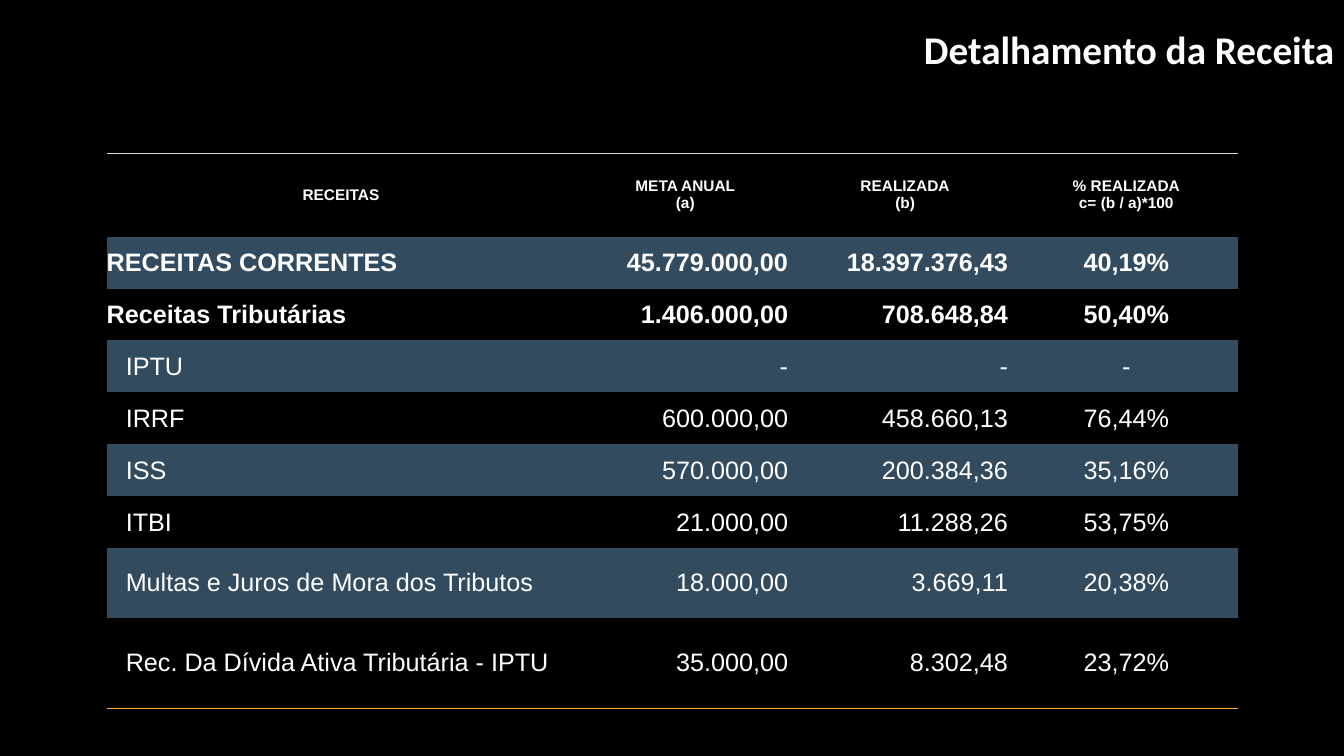
import pptx
import pptx.dml.color
import pptx.enum.text
import pptx.oxml
import pptx.oxml.ns
import pptx.util

Cm = pptx.util.Cm
Pt = pptx.util.Pt
ALIGN = pptx.enum.text.PP_ALIGN
ANCHOR = pptx.enum.text.MSO_ANCHOR

COLORS = {
    "background": "000000",
    "text": "FFFFFF",
    "band": "324B5F",
    "top_line": "D9D9D9",
    "bottom_line": "FCB11C",
}
NO_STYLE = "{2D5ABB26-0587-4C30-8999-92F81FD0307C}"

HEADER = ["RECEITAS", "META ANUAL\n(a)", "REALIZADA\n(b)", "% REALIZADA\nc= (b / a)*100"]
REVENUES = [
    ["RECEITAS CORRENTES", "45.779.000,00", "18.397.376,43", "40,19%"],
    ["Receitas Tributárias", "1.406.000,00", "708.648,84", "50,40%"],
    ["IPTU", "-", "-", "-"],
    ["IRRF", "600.000,00", "458.660,13", "76,44%"],
    ["ISS", "570.000,00", "200.384,36", "35,16%"],
    ["ITBI", "21.000,00", "11.288,26", "53,75%"],
    ["Multas e Juros de Mora dos Tributos", "18.000,00", "3.669,11", "20,38%"],
    ["Rec. Da Dívida Ativa Tributária - IPTU", "35.000,00", "8.302,48", "23,72%"],
]
COL_WIDTHS = [11.81, 5.54, 5.54, 5.61]
ROW_HEIGHTS = [2.1] + [1.31] * 6 + [1.75, 2.28]
COL_ALIGNS = [ALIGN.LEFT, ALIGN.RIGHT, ALIGN.RIGHT, ALIGN.CENTER]
TOTAL_ROWS = 2


def rgb(name):
    return pptx.dml.color.RGBColor.from_string(COLORS[name])


def format_text(tf, font, size, bold, align):
    for p in tf.paragraphs:
        p.alignment = align
        for r in p.runs:
            r.font.name = font
            r.font.size = Pt(size)
            r.font.bold = bold
            r.font.color.rgb = rgb("text")


def add_title(s, text):
    sp = s.shapes.title
    sp.left, sp.top, sp.width, sp.height = Cm(12.47), Cm(0.51), Cm(21.41), Cm(1.45)
    tf = sp.text_frame
    tf.text = text
    tf.word_wrap = True
    tf.auto_size = pptx.enum.text.MSO_AUTO_SIZE.SHAPE_TO_FIT_TEXT
    tf.vertical_anchor = ANCHOR.TOP
    format_text(tf, "Calibri", 28, True, ALIGN.RIGHT)


def add_border(cell, side, color):
    ln = pptx.oxml.parse_xml(
        f'<a:{side} {pptx.oxml.ns.nsdecls("a")} w="{Pt(1)}"><a:solidFill>'
        f'<a:srgbClr val="{COLORS[color]}"/></a:solidFill></a:{side}>'
    )
    cell._tc.get_or_add_tcPr().insert(0, ln)


def fill_cell(cell, text, row, col):
    header = row == 0
    cell.text = text
    cell.vertical_anchor = ANCHOR.MIDDLE
    cell.margin_left = cell.margin_right = cell.margin_top = cell.margin_bottom = 0
    if col == 0 and row > TOTAL_ROWS:
        cell.margin_left = Cm(0.48)
    if COL_ALIGNS[col] == ALIGN.RIGHT and not header:
        cell.margin_right = Cm(0.18)
    format_text(
        cell.text_frame,
        "Arial",
        11 if header else 18,
        row <= TOTAL_ROWS,
        ALIGN.CENTER if header else COL_ALIGNS[col],
    )
    if row % 2:
        cell.fill.solid()
        cell.fill.fore_color.rgb = rgb("band")
    else:
        cell.fill.background()


def add_revenue_table(s):
    rows = [HEADER] + REVENUES
    frame = s.shapes.add_table(
        len(rows), len(HEADER), Cm(2.69), Cm(3.86), Cm(sum(COL_WIDTHS)), Cm(sum(ROW_HEIGHTS))
    )
    table = frame.table
    table._tbl.tblPr.find(pptx.oxml.ns.qn("a:tableStyleId")).text = NO_STYLE
    table.horz_banding = False
    for column, width in zip(table.columns, COL_WIDTHS):
        column.width = Cm(width)
    for row, height in zip(table.rows, ROW_HEIGHTS):
        row.height = Cm(height)
    for i, values in enumerate(rows):
        for j, value in enumerate(values):
            fill_cell(table.cell(i, j), value, i, j)
    for j in range(len(HEADER)):
        add_border(table.cell(0, j), "lnT", "top_line")
        add_border(table.cell(len(rows) - 1, j), "lnB", "bottom_line")


def main():
    prs = pptx.Presentation()
    prs.slide_width, prs.slide_height = Cm(33.87), Cm(19.05)
    s = prs.slides.add_slide(prs.slide_layouts[5])
    s.background.fill.solid()
    s.background.fill.fore_color.rgb = rgb("background")
    add_title(s, "Detalhamento da Receita")
    add_revenue_table(s)
    prs.save("out.pptx")


if __name__ == "__main__":
    main()
